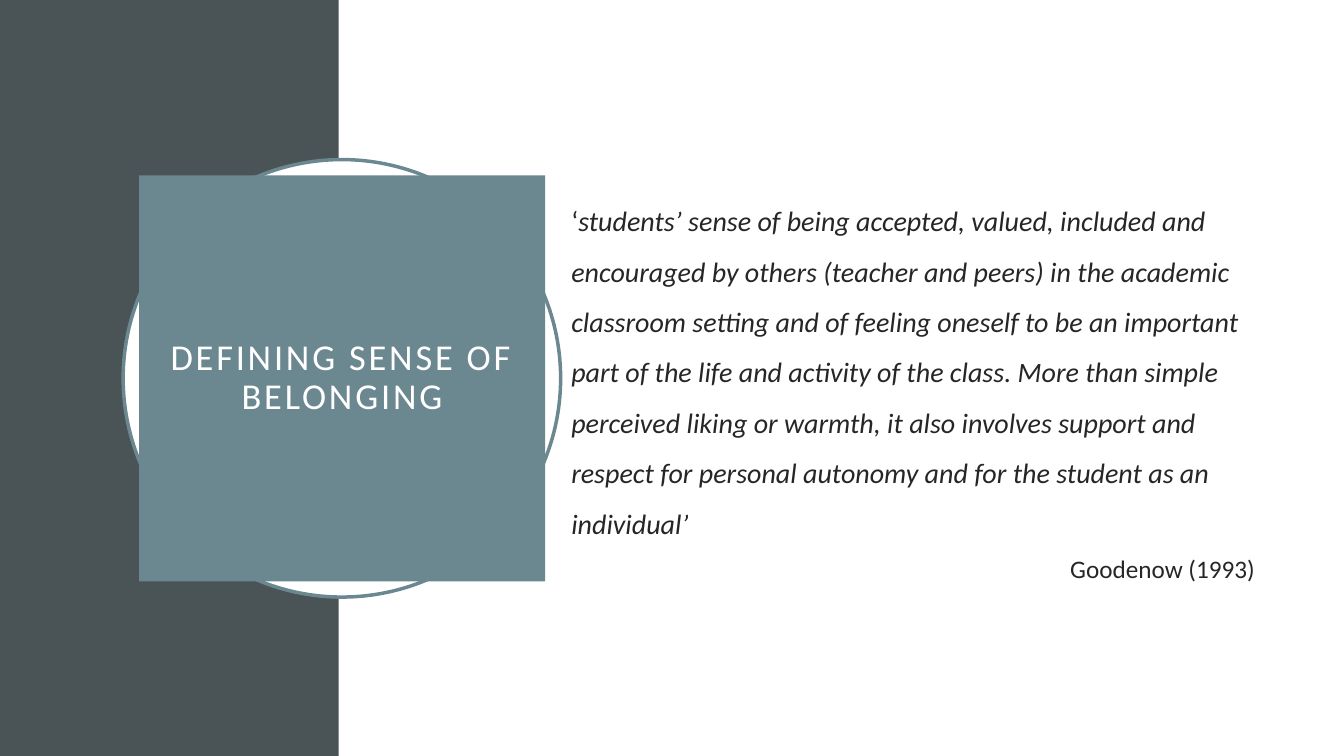
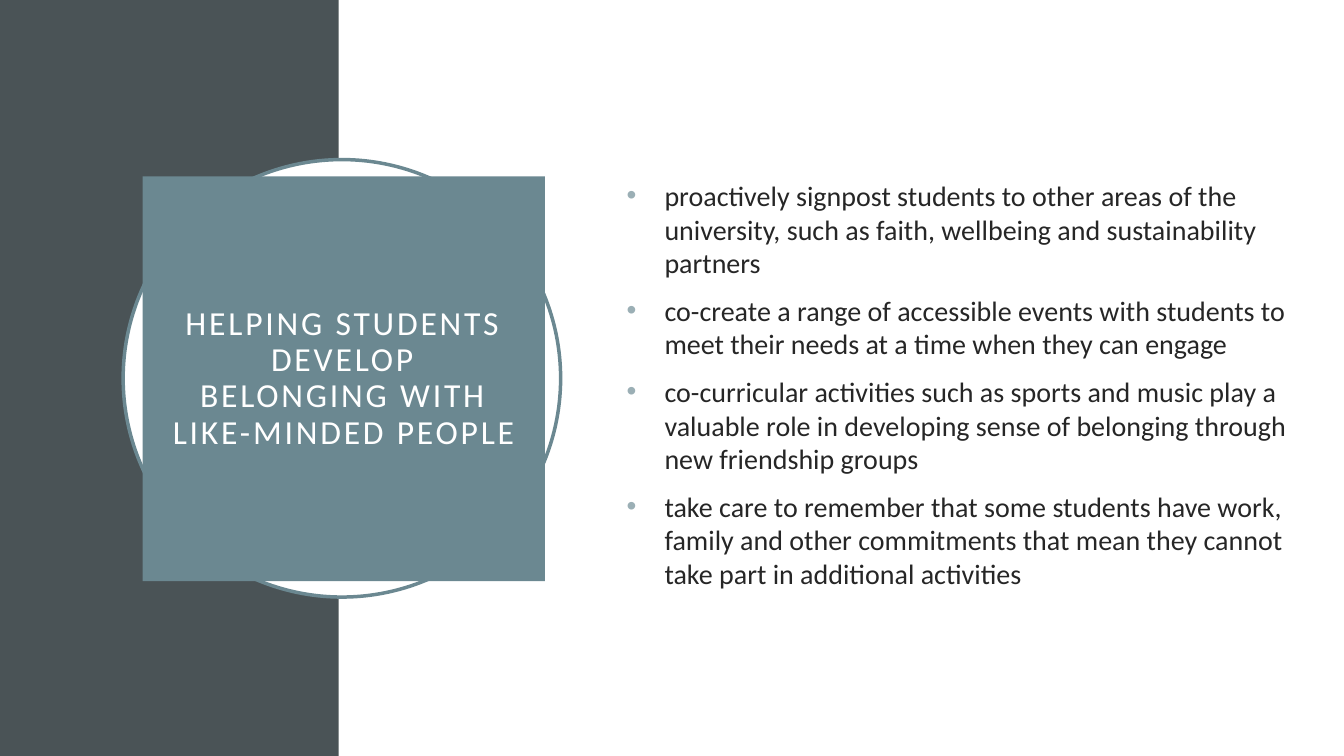
"""Builds two slides on students' sense of belonging."""
import pptx
import pptx.dml.color
import pptx.enum.shapes
import pptx.enum.text
import pptx.oxml.ns
import pptx.util
import lxml.etree

Pt = pptx.util.Pt
ALIGN = pptx.enum.text.PP_ALIGN
SHAPE = pptx.enum.shapes.MSO_SHAPE
COLOURS = {"band": "4A5356", "accent": "6B8891", "bullet": "9BAFB5",
           "text": "262626", "white": "FFFFFF"}
FONT = "Calibri"
BAND_WIDTH = 242
RING = (88, 114, 312.5, 312.5)


def colour(name):
    return pptx.dml.color.RGBColor.from_string(COLOURS[name])


def write(paragraph, text, size=20, ink="text", italic=False, align=ALIGN.LEFT,
          leading=1.0, before=10, tracking=0, bullet=False):
    paragraph.alignment = align
    paragraph.line_spacing = leading
    paragraph.space_before = Pt(before)
    for number, line in enumerate(text.splitlines()):
        if number:
            paragraph.add_line_break()
        run = paragraph.add_run()
        run.text = line
        run.font.name = FONT
        run.font.size = Pt(size)
        run.font.italic = italic
        run.font.color.rgb = colour(ink)
        if tracking:
            run.font._element.set("spc", str(tracking * 100))
    if bullet:
        properties = paragraph._p.get_or_add_pPr()
        properties.set("marL", str(Pt(27)))
        properties.set("indent", str(-Pt(27)))
        tint = lxml.etree.SubElement(properties, pptx.oxml.ns.qn("a:buClr"))
        lxml.etree.SubElement(tint, pptx.oxml.ns.qn("a:srgbClr"), val=COLOURS["bullet"])
        lxml.etree.SubElement(properties, pptx.oxml.ns.qn("a:buFont"), typeface="Arial")
        lxml.etree.SubElement(properties, pptx.oxml.ns.qn("a:buChar"), char="•")


quote = ("students’ sense of being accepted, valued, included and encouraged by others "
         "(teacher and peers) in the academic classroom setting and of feeling oneself to be "
         "an important part of the life and activity of the class. More than simple perceived "
         "liking or warmth, it also involves support and respect for personal autonomy and "
         "for the student as an individual’")
actions = [
    "proactively signpost students to other areas of the university, such as faith, "
    "wellbeing and sustainability partners",
    "co-create a range of accessible events with students to meet their needs at a time "
    "when they can engage",
    "co-curricular activities such as sports and music play a valuable role in developing "
    "sense of belonging through new friendship groups",
    "take care to remember that some students have work, family and other commitments "
    "that mean they cannot take part in additional activities",
]
topics = [
    {"heading": "DEFINING SENSE OF BELONGING", "heading_size": 26,
     "panel": (99.4, 125.2, 290, 290), "body": (401, 110, 502.5, 330.5),
     "paragraphs": [
         [("‘", {"leading": 1.5}), (quote, {"leading": 1.5, "italic": True})],
         [("Goodenow (1993)", {"size": 18, "align": ALIGN.RIGHT})]]},
    {"heading": """HELPING STUDENTS DEVELOP
BELONGING WITH LIKE-MINDED PEOPLE""", "heading_size": 24,
     "panel": (101.8, 126, 287.4, 289.2), "body": (440.6, 114, 504, 321),
     "paragraphs": [[(action, {"bullet": True})] for action in actions]},
]

deck = pptx.Presentation()
deck.slide_width, deck.slide_height = Pt(960), Pt(540)

for topic in topics:
    slide = deck.slides.add_slide(deck.slide_layouts[5])

    band = slide.shapes.add_shape(SHAPE.RECTANGLE, 0, 0, Pt(BAND_WIDTH), deck.slide_height)
    ring = slide.shapes.add_shape(SHAPE.OVAL, *map(Pt, RING))
    for backdrop, fill in ((band, "band"), (ring, "white")):
        backdrop.shadow.inherit = False
        backdrop.fill.solid()
        backdrop.fill.fore_color.rgb = colour(fill)
    band.line.fill.background()
    ring.line.color.rgb = colour("accent")
    ring.line.width = Pt(2.5)

    heading = slide.shapes.title
    slide.shapes._spTree.append(heading._element)
    heading.left, heading.top, heading.width, heading.height = map(Pt, topic["panel"])
    heading.fill.solid()
    heading.fill.fore_color.rgb = colour("accent")
    frame = heading.text_frame
    frame.margin_left = frame.margin_right = frame.margin_top = frame.margin_bottom = Pt(14.4)
    write(frame.paragraphs[0], topic["heading"], size=topic["heading_size"], ink="white",
          align=ALIGN.CENTER, leading=0.9, before=0, tracking=2)

    body = slide.shapes.add_textbox(*map(Pt, topic["body"])).text_frame
    for number, pieces in enumerate(topic["paragraphs"]):
        paragraph = body.add_paragraph() if number else body.paragraphs[0]
        for text, style in pieces:
            write(paragraph, text, **style)

    for frame in (heading.text_frame, body):
        frame.word_wrap = True
        frame.auto_size = pptx.enum.text.MSO_AUTO_SIZE.NONE
        frame.vertical_anchor = pptx.enum.text.MSO_ANCHOR.MIDDLE

deck.save("out.pptx")
